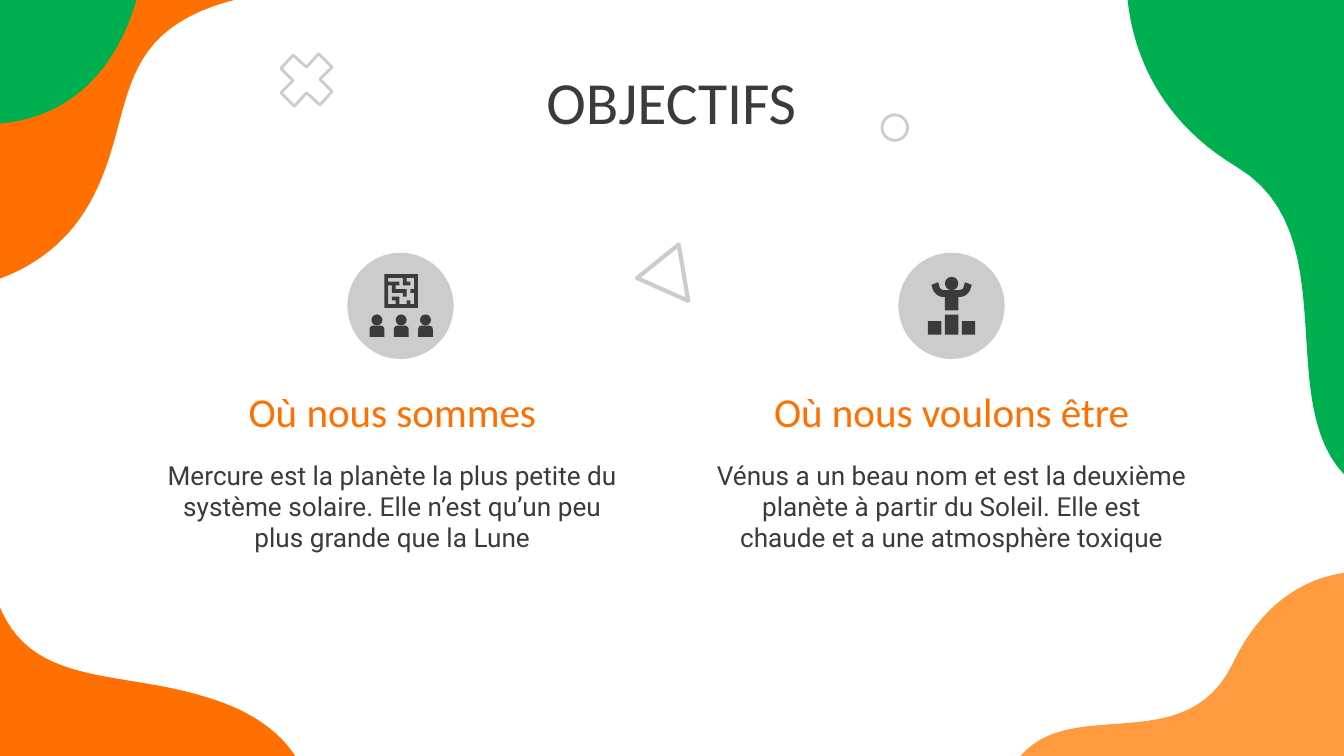
from pptx import Presentation
from pptx.dml.color import RGBColor
from pptx.enum.shapes import MSO_SHAPE as SHAPE
from pptx.enum.text import MSO_ANCHOR as ANCHOR, MSO_AUTO_SIZE as AUTO, PP_ALIGN as ALIGN
from pptx.util import Pt

WHITE = RGBColor(0xFF, 0xFF, 0xFF)
ORANGE = RGBColor(0xFF, 0x70, 0x00)
LIGHT_ORANGE = RGBColor(0xFF, 0x9A, 0x3F)
GREEN = RGBColor(0x00, 0xB0, 0x50)
GREY = RGBColor(0xCC, 0xCC, 0xCC)
DARK = RGBColor(0x3B, 0x3B, 0x3B)

CURVE_STEPS = 24
MAZE_CELL = 2

BLOBS = [
    ((-1.4, 321.8), ORANGE, [
        (0, 85), (0, 0), (16.6, 46.8, 64.8, 36.7, 112.3, 51.8),
        (139, 59.8, 153.4, 72.7, 160.6, 85)]),
    ((604, -0.7), GREEN, [
        (117.4, 0), (0, 0), (2.2, 20.9, 11.5, 61.9, 58.3, 90),
        (118.1, 125.3, 77, 216.7, 117.4, 256.3)]),
    ((545.8, 306.7), LIGHT_ORANGE, [
        (175.7, 100.1), (176.4, 0), (162, 1.4, 133.2, 9.4, 114.5, 49),
        (89.3, 100.8, 27.4, 64.8, 0, 99.4)]),
    ((-1.4, -1.4), ORANGE, [
        (0, 1.4), (132.5, 0), (59, 16.6, 74.9, 60.5, 51.8, 105.8),
        (39.6, 130.3, 20.2, 144, 0, 151.2)]),
    ((-1.4, -1.4), GREEN, [
        (74.9, 0), (69.1, 21.6, 51.1, 64.1, 0, 67.7), (0, 1.4)]),
]
CROSS = [(20.9, 27.4), (27.4, 20.2), (20.9, 13.7), (27.4, 7.2), (20.2, 0), (13.7, 7.2),
         (6.5, 0.7), (0, 7.9), (6.5, 14.4), (0, 20.9), (7.2, 28.1), (13.7, 20.9)]
TRIANGLE = [(27.4, 30.2), (22.3, 0), (0, 18)]
MAZE_WALL = [(0, 0), (0, 9), (9, 9), (9, 0)]
MAZE_PATH = [(8, 1), (8, 4), (7, 4), (7, 5), (8, 5), (8, 8), (7, 8), (7, 7), (6, 7),
             (6, 8), (4, 8), (4, 6), (2, 6), (2, 7), (3, 7), (3, 8), (1, 8), (1, 3),
             (2, 3), (2, 5), (5, 5), (5, 6), (6, 6), (6, 4), (3, 4), (3, 3), (4, 3),
             (4, 2), (1, 2), (1, 1), (5, 1), (5, 3), (7, 3), (7, 2), (6, 2), (6, 1)]
CLIMBER = [(3.6, 0), (0, 1.4), (0.7, 3.6), (1.4, 5.8, 3.6, 7.9, 6.5, 7.9), (7.2, 7.9),
           (7.2, 15.1), (14.4, 15.1), (14.4, 7.9), (15.1, 7.9),
           (18, 7.9, 20.2, 5.8, 20.9, 3.6), (21.6, 1.4), (18, 0), (17.3, 2.2),
           (17.3, 3.6, 15.8, 4.3, 13.7, 4.3), (7.9, 4.3),
           (5.8, 4.3, 4.3, 3.6, 4.3, 2.2)]


def paint(sp, fill=None, line=None, width=1.5):
    sp.shadow.inherit = False
    if fill is None:
        sp.fill.background()
    else:
        sp.fill.solid()
        sp.fill.fore_color.rgb = fill
    if line is None:
        sp.line.fill.background()
    else:
        sp.line.color.rgb = line
        sp.line.width = Pt(width)
    return sp


def add_preset(s, kind, x, y, w, h, **look):
    return paint(s.shapes.add_shape(kind, Pt(x), Pt(y), Pt(w), Pt(h)), **look)


def flatten(steps):
    points = []
    for step in steps:
        if len(step) == 2:
            points.append(step)
            continue
        a, b, c, d = points[-1], step[:2], step[2:4], step[4:]
        for i in range(1, CURVE_STEPS + 1):
            t = i / CURVE_STEPS
            u = 1 - t
            points.append(tuple(
                u**3 * a[k] + 3 * u * u * t * b[k] + 3 * u * t * t * c[k] + t**3 * d[k]
                for k in (0, 1)))
    return points


def add_outline(s, x, y, *contours, unit=1, **look):
    builder = None
    for contour in contours:
        first, *rest = [(Pt(x + px * unit), Pt(y + py * unit))
                        for px, py in flatten(contour)]
        if builder is None:
            builder = s.shapes.build_freeform(*first, scale=1.0)
        else:
            builder.move_to(*first)
        builder.add_line_segments(rest, close=True)
    return paint(builder.convert_to_shape(), **look)


def write(sp, text, font="Calibri", size=14, color=DARK, after=0):
    tf = sp.text_frame
    tf.word_wrap = True
    tf.auto_size = AUTO.NONE
    tf.vertical_anchor = ANCHOR.MIDDLE
    tf.margin_left = tf.margin_right = tf.margin_top = tf.margin_bottom = Pt(7.2)
    p = tf.paragraphs[0]
    p.alignment = ALIGN.CENTER
    p.space_after = Pt(after)
    r = p.add_run()
    r.text = text
    r.font.name = font
    r.font.size = Pt(size)
    r.font.color.rgb = color


def add_title(s, x, y, w, h):
    title = s.shapes.title
    title.left, title.top, title.width, title.height = Pt(x), Pt(y), Pt(w), Pt(h)
    write(title, "OBJECTIFS", size=32)


def add_column(s, x, y, w, heading, body):
    inset, heading_h, body_h = 9.2, 38.9, 62.6
    box = s.shapes.add_textbox(Pt(x + inset), Pt(y), Pt(w - 2 * inset), Pt(heading_h))
    write(box, heading, size=22, color=ORANGE)
    box = s.shapes.add_textbox(Pt(x), Pt(y + heading_h), Pt(w), Pt(body_h))
    write(box, body, font="Roboto", after=12)


def add_badge(s, x, y):
    add_preset(s, SHAPE.OVAL, x, y, 56.9, 56.9, fill=GREY)


def add_maze_icon(s, x, y):
    add_badge(s, x, y)
    add_outline(s, x + 19.8, y + 11.5, MAZE_PATH, MAZE_WALL, unit=MAZE_CELL, fill=DARK)
    for i in range(3):
        left = x + 11.9 + 13 * i
        add_preset(s, SHAPE.OVAL, left + 1, y + 33.1, 5.9, 5.9, fill=DARK)
        body = add_preset(s, SHAPE.ROUND_2_SAME_RECTANGLE, left, y + 39, 7.9, 6.1, fill=DARK)
        body.adjustments[0] = 0.33


def add_podium_icon(s, x, y):
    add_badge(s, x, y)
    add_preset(s, SHAPE.OVAL, x + 24.9, y + 12.9, 7.2, 7.2, fill=DARK)
    add_outline(s, x + 17.7, y + 15.8, CLIMBER, fill=DARK)
    for dx, dy, h in ((24.9, 33.1, 10.8), (15.8, 36.7, 7.2), (34, 36.7, 7.2)):
        add_preset(s, SHAPE.RECTANGLE, x + dx, y + dy, 7.2, h, fill=DARK)


def add_ornaments(s, x, y):
    add_preset(s, SHAPE.OVAL, x + 472.5, y + 61.5, 13.7, 13.7, line=GREY)
    add_outline(s, x + 150.5, y + 28.8, CROSS, line=GREY)
    add_outline(s, x + 341.3, y + 131, TRIANGLE, line=GREY, width=2.25)


def main():
    prs = Presentation()
    prs.slide_width, prs.slide_height = Pt(720), Pt(405)
    s = prs.slides.add_slide(prs.slide_layouts[5])
    s.background.fill.solid()
    s.background.fill.fore_color.rgb = WHITE
    for (x, y), color, steps in BLOBS:
        add_outline(s, x, y, steps, fill=color)
    add_title(s, 56.2, 35.3, 607, 37.4)
    add_column(s, 77, 200.9, 266.4, "Où nous sommes",
               "Mercure est la planète la plus petite du système solaire. "
               "Elle n’est qu’un peu plus grande que la Lune")
    add_column(s, 376.6, 200.9, 266.4, "Où nous voulons être",
               "Vénus a un beau nom et est la deuxième planète à partir du Soleil. "
               "Elle est chaude et a une atmosphère toxique")
    add_podium_icon(s, 481.3, 135.4)
    add_maze_icon(s, 186.1, 135.4)
    add_ornaments(s, 0, 0)
    prs.save("out.pptx")


if __name__ == "__main__":
    main()
